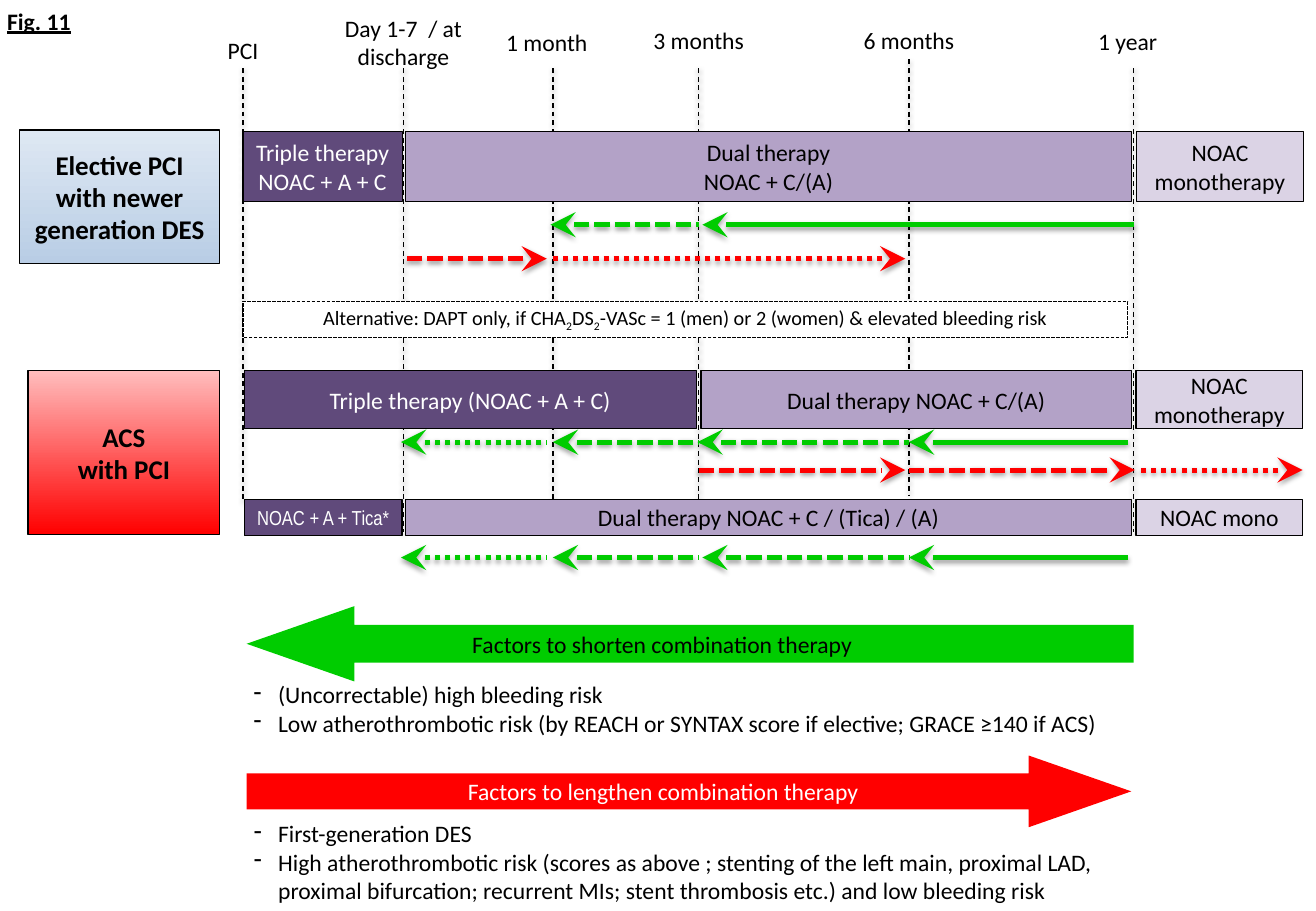
from lxml import etree
from pptx import Presentation
from pptx.dml.color import RGBColor
from pptx.enum import dml, shapes, text
from pptx.oxml import ns
from pptx.util import Inches, Pt

BLACK = RGBColor(0x00, 0x00, 0x00)
WHITE = RGBColor(0xFF, 0xFF, 0xFF)
GREEN = RGBColor(0x00, 0xCC, 0x00)
RED = RGBColor(0xFF, 0x00, 0x00)
PINK = RGBColor(0xFF, 0xBD, 0xBD)
BLUE = RGBColor(0xB9, 0xCD, 0xE5)
PALE_BLUE = RGBColor(0xDE, 0xE8, 0xF3)
TRIPLE = RGBColor(0x60, 0x4A, 0x7B)
DUAL = RGBColor(0xB3, 0xA2, 0xC7)
MONO = RGBColor(0xDB, 0xD3, 0xE5)

DASH = dml.MSO_LINE.DASH
SHORT_DASH = dml.MSO_LINE.SQUARE_DOT
DOT = dml.MSO_LINE.ROUND_DOT
SOLID = None

# Horizontal positions of the time points, in inches
PCI, DISCHARGE, MONTH_1, MONTH_3, MONTH_6, YEAR_1, END = 2, 3.32, 4.55, 5.75, 7.48, 9.33, 10.72
GAP = 0.02


def write(shape, content, color=BLACK, align=text.PP_ALIGN.CENTER, bullet=False,
          margins=(0.1, 0.05, 0.1, 0.05), **font_values):
    """Fill a shape with one paragraph per line; parts between bars are subscript."""
    frame = shape.text_frame
    frame.word_wrap = True
    frame.vertical_anchor = text.MSO_ANCHOR.MIDDLE
    for side, margin in zip(("left", "top", "right", "bottom"), margins):
        setattr(frame, f"margin_{side}", Inches(margin))
    font_values = {"name": "Calibri", "size": Pt(14), **font_values}
    for number, line in enumerate(content.split("\n")):
        paragraph = frame.add_paragraph() if number else frame.paragraphs[0]
        paragraph.alignment = align
        if bullet:
            properties = paragraph._p.get_or_add_pPr()
            properties.set("marL", str(Inches(0.2)))
            properties.set("indent", str(-Inches(0.2)))
            etree.SubElement(properties, ns.qn("a:buChar"), char="-")
        for part, words in enumerate(line.split("|")):
            run = paragraph.add_run()
            run.text = words
            run.font.color.rgb = color
            for name, value in font_values.items():
                setattr(run.font, name, value)
            if part % 2:
                run.font._element.set("baseline", "-25000")


def add_label(slide, box, content, **values):
    label = slide.shapes.add_textbox(*map(Inches, box))
    write(label, content, **values)


def add_block(slide, box, fill, kind=shapes.MSO_SHAPE.RECTANGLE, outline=True):
    """A shape filled with one colour, or with a list of two for a gradient."""
    block = slide.shapes.add_shape(kind, *map(Inches, box))
    block.shadow.inherit = False
    if isinstance(fill, RGBColor):
        block.fill.solid()
        block.fill.fore_color.rgb = fill
    else:
        block.fill.gradient()
        block.fill.gradient_angle = 270
        for stop, color in zip(block.fill.gradient_stops, fill):
            stop.color.rgb = color
    if outline:
        block.line.color.rgb = BLACK
        block.line.width = Pt(0.75)
    else:
        block.line.fill.background()
    return block


def add_line(slide, start, end, color, width, dash=SOLID, arrow_end=None):
    line = slide.shapes.add_connector(shapes.MSO_CONNECTOR.STRAIGHT, *map(Inches, start + end))
    line.line.color.rgb = color
    line.line.width = Pt(width)
    if dash is not SOLID:
        line.line.dash_style = dash
    properties = line.element.spPr
    if arrow_end:
        etree.SubElement(properties.find(ns.qn("a:ln")), ns.qn(arrow_end),
                         type="stealth", w="lg", len="lg")
    # Soft shadow just below the line
    effects = etree.SubElement(properties, ns.qn("a:effectLst"))
    shadow = etree.SubElement(effects, ns.qn("a:outerShdw"), blurRad=str(Pt(3.1)),
                              dist=str(Pt(1.6)), dir="5400000", rotWithShape="0")
    shade = etree.SubElement(shadow, ns.qn("a:srgbClr"), val="000000")
    etree.SubElement(shade, ns.qn("a:alpha"), val="38000")


def add_timeline(slide, top):
    """Dashed guides, each with its label above."""
    points = [(PCI, "PCI", 0.24, 0.34, 0.56, 4.14),
              (DISCHARGE, "Day 1-7  / at\ndischarge", 0.06, 0.57, 0.56, 4.38),
              (MONTH_1 - 0.05, "1 month", 0.18, 0.34, 0.56, 4.14),
              (MONTH_3, "3 months", 0.16, 0.34, 0.56, 4.14),
              (MONTH_6, "6 months", 0.16, 0.34, 0.49, 4.08),
              (YEAR_1 - 0.05, "1 year", 0.17, 0.34, 0.56, 4.38)]
    guides = (PCI, DISCHARGE, MONTH_1, MONTH_3, MONTH_6, YEAR_1)
    for guide, (center, label, offset, height, start, end) in zip(guides, points):
        add_line(slide, (guide, top + start), (guide, top + end), BLACK, 0.75, DASH)
        add_label(slide, (center - 0.56, top + offset, 1.12, height), label,
                  margins=(0.04, 0.05, 0.04, 0.05))


def add_patient_group(slide, box, content, colors):
    group = add_block(slide, box, colors)
    write(group, content, size=Pt(16), bold=True)


def add_therapy_row(slide, top, height, bars, shorten=(), lengthen=(), offsets=(0, 0)):
    """A row of therapy bars with the arrows that belong below it."""
    for start, end, color, content, values in bars:
        left = start + GAP if start >= DISCHARGE else start
        bar = add_block(slide, (left, top, end - GAP - left, height), color)
        write(bar, content, WHITE if color == TRIPLE else BLACK,
              margins=(0.1, 0, 0.1, 0), **values)
    directions = ((shorten, GREEN, "a:headEnd"), (lengthen, RED, "a:tailEnd"))
    for (arrows, color, arrow_end), offset in zip(directions, offsets):
        for start, end, dash in arrows:
            add_line(slide, (start, top + offset), (end, top + offset), color, 3, dash, arrow_end)


def add_factors(slide, box, kind, color, content, factors, font_color, right_margin,
                list_top, list_height):
    """A wide arrow with its list of factors below."""
    left, top, width, height = box
    arrow = add_block(slide, box, color, kind, outline=False)
    arrow.adjustments[0] = 0.5
    arrow.adjustments[1] = 1.43
    write(arrow, content, font_color, margins=(0.1, 0, right_margin, 0))
    add_label(slide, (left - 0.04, top + list_top, width + 0.1, list_height), factors,
              align=text.PP_ALIGN.LEFT, bullet=True)


def main():
    presentation = Presentation()
    presentation.slide_width, presentation.slide_height = Inches(10.83), Inches(7.5)
    slide = presentation.slides.add_slide(presentation.slide_layouts[6])

    # Heading and time axis
    add_label(slide, (-0.04, 0, 0.8, 0.34), "Fig. 11", align=text.PP_ALIGN.LEFT,
              bold=True, underline=True)
    add_timeline(slide, 0)

    # Elective patients
    add_patient_group(slide, (0.16, 1.07, 1.65, 1.1),
                      "Elective PCI\nwith newer generation DES", [PALE_BLUE, BLUE])
    add_therapy_row(
        slide, 1.08, 0.58,
        [(PCI, DISCHARGE + 0.01, TRIPLE, "Triple therapy\nNOAC + A + C", {}),
         (DISCHARGE, YEAR_1, DUAL, "Dual therapy\nNOAC + C/(A)", {}),
         (YEAR_1, END + 0.03, MONO, "NOAC\nmonotherapy", {})],
        shorten=[(MONTH_1 - 0.02, MONTH_3, SHORT_DASH), (MONTH_3 + 0.03, YEAR_1, SOLID)],
        lengthen=[(DISCHARGE + 0.03, MONTH_1 - 0.05, SHORT_DASH), (MONTH_1, MONTH_6 - 0.03, DOT)],
        offsets=(0.77, 1.05))

    # Alternative strategy
    alternative = add_block(slide, (PCI, 2.48, 7.28, 0.3), WHITE)
    alternative.line.dash_style = SHORT_DASH
    write(alternative, "Alternative: DAPT only, if CHA|2|DS|2|-VASc = 1 (men) or 2 (women) "
          "& elevated bleeding risk", size=Pt(12))

    # Patients with acute coronary syndrome
    add_patient_group(slide, (0.23, 3.05, 1.58, 1.35), "ACS\nwith PCI", [PINK, RED])
    early = [(DISCHARGE - 0.02, MONTH_1 - 0.05, DOT), (MONTH_1, MONTH_3, SHORT_DASH)]
    late = (MONTH_6, YEAR_1 - 0.05, SOLID)
    add_therapy_row(
        slide, 3.05, 0.48,
        [(PCI + 0.01, MONTH_3, TRIPLE, "Triple therapy (NOAC + A + C)", {}),
         (MONTH_3, YEAR_1, DUAL, "Dual therapy NOAC + C/(A)", {}),
         (YEAR_1, END + GAP, MONO, "NOAC\nmonotherapy", {})],
        shorten=early + [(MONTH_3 - 0.01, MONTH_6, SHORT_DASH), late],
        lengthen=[(MONTH_3, MONTH_6 - 0.03, SHORT_DASH), (MONTH_6, YEAR_1 + 0.01, SHORT_DASH),
                  (YEAR_1 + 0.06, END, DOT)],
        offsets=(0.59, 0.82))
    add_therapy_row(
        slide, 4.11, 0.3,
        [(PCI + 0.01, DISCHARGE + 0.01, TRIPLE, "NOAC + A + Tica*",
          {"name": "Arial Narrow", "size": Pt(12)}),
         (DISCHARGE, YEAR_1, DUAL, "Dual therapy NOAC + C / (Tica) / (A)", {}),
         (YEAR_1, END + GAP, MONO, "NOAC mono", {})],
        shorten=early + [(MONTH_3 + 0.03, MONTH_6, SHORT_DASH), late],
        offsets=(0.48, 0))

    # Factors for either direction
    add_factors(slide, (2.03, 4.99, 7.3, 0.62), shapes.MSO_SHAPE.LEFT_ARROW, GREEN,
                "Factors to shorten combination therapy",
                "(Uncorrectable) high bleeding risk\nLow atherothrombotic risk "
                "(by REACH or SYNTAX score if elective; GRACE ≥140 if ACS)",
                BLACK, right_margin=1, list_top=0.56, list_height=0.57)
    add_factors(slide, (2.03, 6.22, 7.28, 0.59), shapes.MSO_SHAPE.RIGHT_ARROW, RED,
                "Factors to lengthen combination therapy",
                "First-generation DES\nHigh atherothrombotic risk (scores as above ; stenting of "
                "the left main, proximal LAD, proximal bifurcation; recurrent MIs; stent "
                "thrombosis etc.) and low bleeding risk",
                WHITE, right_margin=0.1, list_top=0.47, list_height=0.81)

    presentation.save("out.pptx")


if __name__ == "__main__":
    main()
